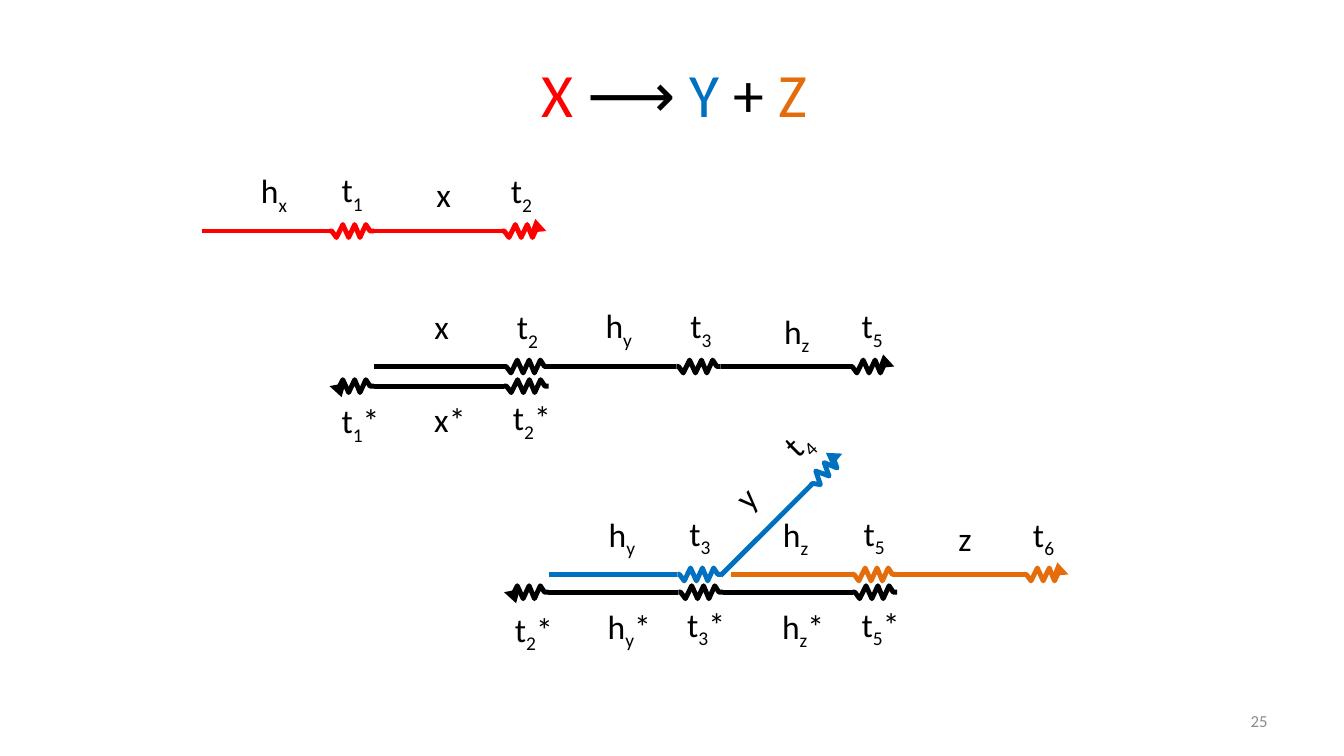
from pptx import Presentation
from pptx.dml.color import RGBColor
from pptx.enum.shapes import MSO_CONNECTOR
from pptx.enum.text import MSO_ANCHOR, MSO_AUTO_SIZE, PP_ALIGN
from pptx.oxml.ns import qn
from pptx.util import Pt
from lxml.etree import SubElement

RED = RGBColor(0xFF, 0x00, 0x00)
BLUE = RGBColor(0x00, 0x70, 0xC0)
ORANGE = RGBColor(0xE4, 0x6C, 0x0A)
BLACK = RGBColor(0x00, 0x00, 0x00)
GRAY = RGBColor(0x8C, 0x8C, 0x8C)
FONT = "Calibri"

# Toehold zigzag, in points from its left end and middle line
ZIGZAG_X = [0, 1.6, 5, 9.5, 13.7, 18, 21.8, 26, 29, 31.7]
ZIGZAG_Y = [0, 0, 4.6, -4.6, 4.6, -4.6, 4.6, -4.6, 0, 0]
TOEHOLD = ZIGZAG_X[-1]

# Widths of label parts
LETTER = {"t": 8.4, "h": 12.2, "x": 10.8, "y": 10.8, "z": 10.1}
SUBSCRIPT, STAR, INSETS = 7.8, 12.4, 14.4

# Strands: colour, middle line, start, toehold positions, arrow end
STRANDS = [
    (RED, 165, 144, [235.4, 358.6], "tail"),
    (BLACK, 261.8, 267.1, [360, 483.1, 607.1], "tail"),
    (BLACK, 275.8, 235.4, [235.4, 360.2], "head"),
    (BLACK, 423, 360, [360, 484.6, 609.1], "head"),
    (ORANGE, 410.3, 522, [608.5, 731.5], "tail"),
    (BLUE, 410.3, 392.4, [483.8], None),
]

# Labels: text ("_" marks a subscript), left, top, rotation
LABELS = [
    ("h_x", 179.3, 118, 0), ("t_1", 236.9, 117.4, 0),
    ("x", 304.6, 121, 0), ("t_2", 357.8, 118, 0),
    ("x", 303.1, 215.3, 0), ("t_2", 362.2, 215.3, 0),
    ("h_y", 425.5, 214.6, 0), ("t_3", 486, 214.6, 0),
    ("h_z", 553, 218.2, 0), ("t_5", 608.4, 214.6, 0),
    ("t_1*", 236.9, 282.2, 0), ("x*", 303.1, 281.5, 0),
    ("t_2*", 359.3, 280.1, 0),
    ("h_y", 427.7, 363.6, 0), ("t_3", 485.3, 362.9, 0),
    ("h_z", 552.2, 363.6, 0), ("t_5", 609.8, 362.9, 0),
    ("z", 677.5, 366.5, 0), ("t_6", 730.8, 363.6, 0),
    ("t_2*", 360.7, 431.3, 0), ("h_y*", 427, 429.1, 0),
    ("t_3*", 483.8, 427.7, 0), ("h_z*", 551.5, 429.1, 0),
    ("t_5*", 608.4, 427.7, 0),
    ("y", 519.8, 337.7, 315), ("t_4", 553.7, 297.4, 315),
]


def style_line(s, color, arrow=None):
    s.line.color.rgb = color
    s.line.width = Pt(3.5)
    if arrow:
        SubElement(s.line._get_or_add_ln(), qn(f"a:{arrow}End"), type="triangle")


def add_domain(shapes, color, x1, y1, x2, y2):
    s = shapes.add_connector(MSO_CONNECTOR.STRAIGHT, Pt(x1), Pt(y1), Pt(x2), Pt(y2))
    style_line(s, color)
    SubElement(s._element.spPr, qn("a:effectLst"))


def add_toehold(shapes, color, x, y, arrow=None, rotation=0):
    points = [(Pt(x + dx), Pt(y + dy)) for dx, dy in zip(ZIGZAG_X, ZIGZAG_Y)]
    builder = shapes.build_freeform(*points[0])
    builder.add_line_segments(points[1:], close=False)
    s = builder.convert_to_shape()
    s.fill.background()
    s.shadow.inherit = False
    s.rotation = rotation
    style_line(s, color, arrow)


def add_strand(shapes, color, y, start, toeholds, arrow):
    arrow_at = {"tail": toeholds[-1], "head": toeholds[0]}.get(arrow)
    for x in toeholds:
        if x > start:
            add_domain(shapes, color, start, y, x, y)
        add_toehold(shapes, color, x, y, arrow if x == arrow_at else None)
        start = x + TOEHOLD


def add_label(shapes, text, left, top, rotation):
    base, _, rest = text.partition("_")
    sub, star = rest[:1], rest[1:]
    width = INSETS + LETTER[base[0]] + SUBSCRIPT * len(sub) + STAR * text.count("*")
    s = shapes.add_textbox(Pt(left), Pt(top), Pt(width), Pt(36))
    s.rotation = rotation
    tf = s.text_frame
    tf.word_wrap = False
    tf.auto_size = MSO_AUTO_SIZE.SHAPE_TO_FIT_TEXT
    p = tf.paragraphs[0]
    p.font.name, p.font.size = FONT, Pt(24)
    p.font.color.rgb = BLACK
    for part in filter(None, (base, sub, star)):
        r = p.add_run()
        r.text = part
        if part == sub:
            r.font._element.set("baseline", "-25000")


def add_title(s):
    s.left, s.top, s.width, s.height = Pt(157.5), Pt(21.6), Pt(648), Pt(90)
    tf = s.text_frame
    tf.vertical_anchor = MSO_ANCHOR.MIDDLE
    p = tf.paragraphs[0]
    p.alignment = PP_ALIGN.CENTER
    p.font.name, p.font.size = FONT, Pt(44)
    for text, color in [("X", RED), (" ⟶ ", BLACK), ("Y", BLUE),
                        (" + ", BLACK), ("Z", ORANGE)]:
        r = p.add_run()
        r.text = text
        r.font.color.rgb = color


def add_page_number(shapes, text):
    s = shapes.add_textbox(Pt(688.5), Pt(500.5), Pt(224), Pt(28.75))
    tf = s.text_frame
    tf.word_wrap = True
    tf.vertical_anchor = MSO_ANCHOR.MIDDLE
    p = tf.paragraphs[0]
    p.text = text
    p.alignment = PP_ALIGN.RIGHT
    p.font.name, p.font.size = FONT, Pt(12)
    p.font.color.rgb = GRAY


def main():
    prs = Presentation()
    prs.slide_width, prs.slide_height = Pt(960), Pt(540)
    slide = prs.slides.add_slide(prs.slide_layouts[5])
    shapes = slide.shapes
    add_title(shapes.title)

    # Strands
    for strand in STRANDS:
        add_strand(shapes, *strand)

    # Branch of the blue strand
    add_domain(shapes, BLUE, 514.8, 411.1, 579.6, 346.3)
    add_toehold(shapes, BLUE, 574.6, 335.2, "tail", 315)

    # Labels and page number
    for label in LABELS:
        add_label(shapes, *label)
    add_page_number(shapes, "25")
    prs.save("out.pptx")


if __name__ == "__main__":
    main()
